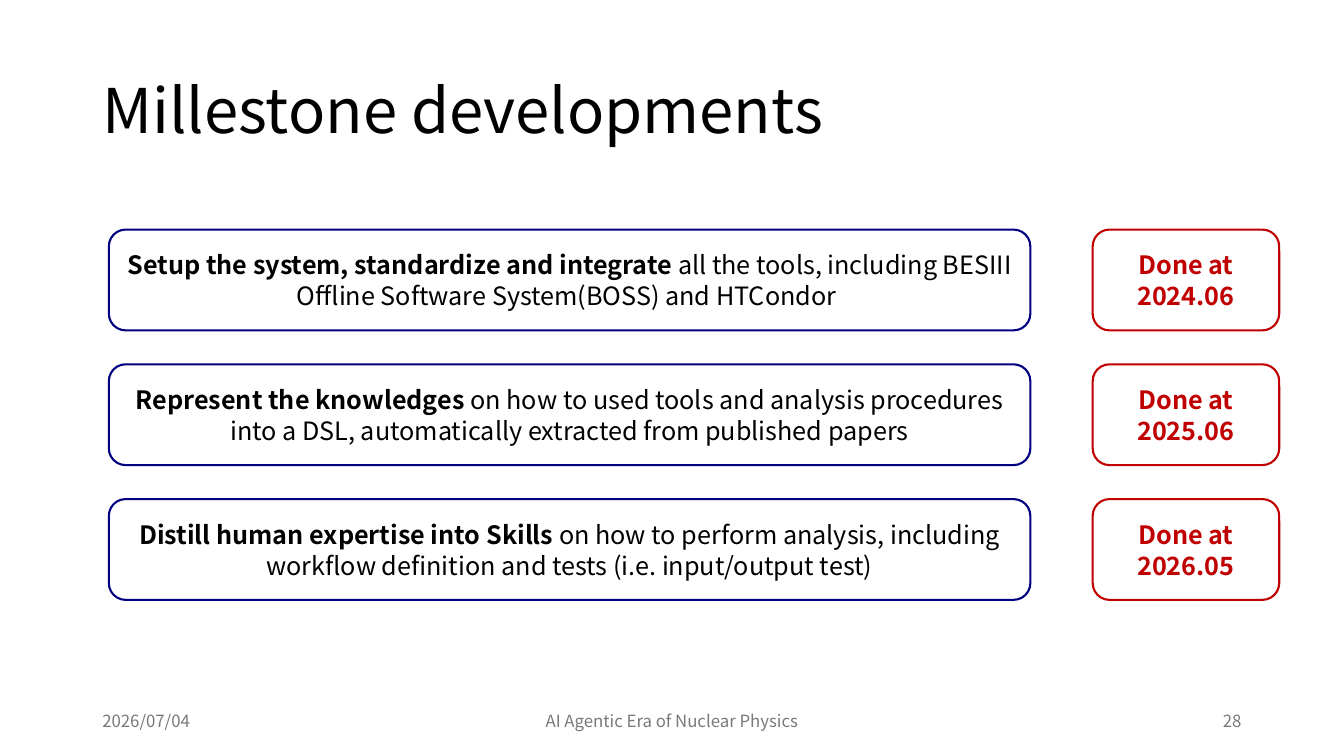
from dataclasses import dataclass

import pptx
import pptx.dml.color
import pptx.enum.shapes
import pptx.enum.text
import pptx.util

Pt = pptx.util.Pt
Align = pptx.enum.text.PP_ALIGN
Anchor = pptx.enum.text.MSO_ANCHOR

FONT = "Noto Sans CJK SC"
COLORS = {"text": "000000", "navy": "000080", "red": "C00000", "gray": "797979"}
TOP, STEP, HEIGHT = 164, 96.25, 72


@dataclass
class Goal:
    lead: str
    rest: str
    date: str


@dataclass
class Footer:
    text: str
    left: float
    width: float
    align: Align


GOALS = [
    Goal("Setup the system, standardize and integrate ",
         "all the tools, including BESIII Offline Software System(BOSS) and HTCondor ",
         "2024.06"),
    Goal("Represent the knowledges ",
         "on how to used tools and analysis procedures into a DSL, "
         "automatically extracted from published papers",
         "2025.06"),
    Goal("Distill human expertise into Skills ",
         "on how to perform analysis, including workflow definition and tests "
         "(i.e. input/output test)",
         "2026.05"),
]

FOOTERS = [
    Footer("2026/07/04", 66, 216, Align.LEFT),
    Footer("AI Agentic Era of Nuclear Physics", 318, 324, Align.CENTER),
    Footer("28", 678, 216, Align.RIGHT),
]


def color(name: str) -> pptx.dml.color.RGBColor:
    return pptx.dml.color.RGBColor.from_string(COLORS[name])


def style(para, size: float, tint: str, align: Align) -> None:
    para.alignment = align
    para.font.name = FONT
    para.font.size = Pt(size)
    para.font.color.rgb = color(tint)


def setup(frame) -> None:
    frame.word_wrap = True
    frame.auto_size = pptx.enum.text.MSO_AUTO_SIZE.NONE
    frame.vertical_anchor = Anchor.MIDDLE


def add_title(slide, text: str) -> None:
    title = slide.shapes.title
    title.left, title.top, title.width, title.height = Pt(66), Pt(28.75), Pt(828), Pt(104.4)
    setup(title.text_frame)
    title.text_frame.text = text
    para = title.text_frame.paragraphs[0]
    para.line_spacing = 0.9
    style(para, 44, "text", Align.LEFT)


def add_card(slide, left: float, top: float, width: float, line: str, tint: str,
             bold: str, plain: str = "") -> None:
    card = slide.shapes.add_shape(
        pptx.enum.shapes.MSO_SHAPE.ROUNDED_RECTANGLE,
        Pt(left), Pt(top), Pt(width), Pt(HEIGHT))
    card.shadow.inherit = False
    card.fill.background()
    card.line.color.rgb = color(line)
    card.line.width = Pt(1.5)
    setup(card.text_frame)
    para = card.text_frame.paragraphs[0]
    para.line_spacing = Pt(22)
    style(para, 18, tint, Align.CENTER)
    for text, heavy in ((bold, True), (plain, False)):
        if text:
            run = para.add_run()
            run.text = text
            run.font.bold = heavy


def add_footer(slide, item: Footer) -> None:
    box = slide.shapes.add_textbox(Pt(item.left), Pt(500.5), Pt(item.width), Pt(28.75))
    setup(box.text_frame)
    box.text_frame.text = item.text
    style(box.text_frame.paragraphs[0], 12, "gray", item.align)


def main() -> None:
    deck = pptx.Presentation()
    deck.slide_width, deck.slide_height = Pt(960), Pt(540)
    slide = deck.slides.add_slide(deck.slide_layouts.get_by_name("Title Only"))
    add_title(slide, "Millestone developments")
    for item in FOOTERS:
        add_footer(slide, item)
    for row, goal in enumerate(GOALS):
        top = TOP + row * STEP
        add_card(slide, 77.75, top, 658.25, "navy", "text", goal.lead, goal.rest)
        add_card(slide, 780.5, top, 133.25, "red", "red", f"Done at {goal.date}")
    deck.save("out.pptx")


if __name__ == "__main__":
    main()
